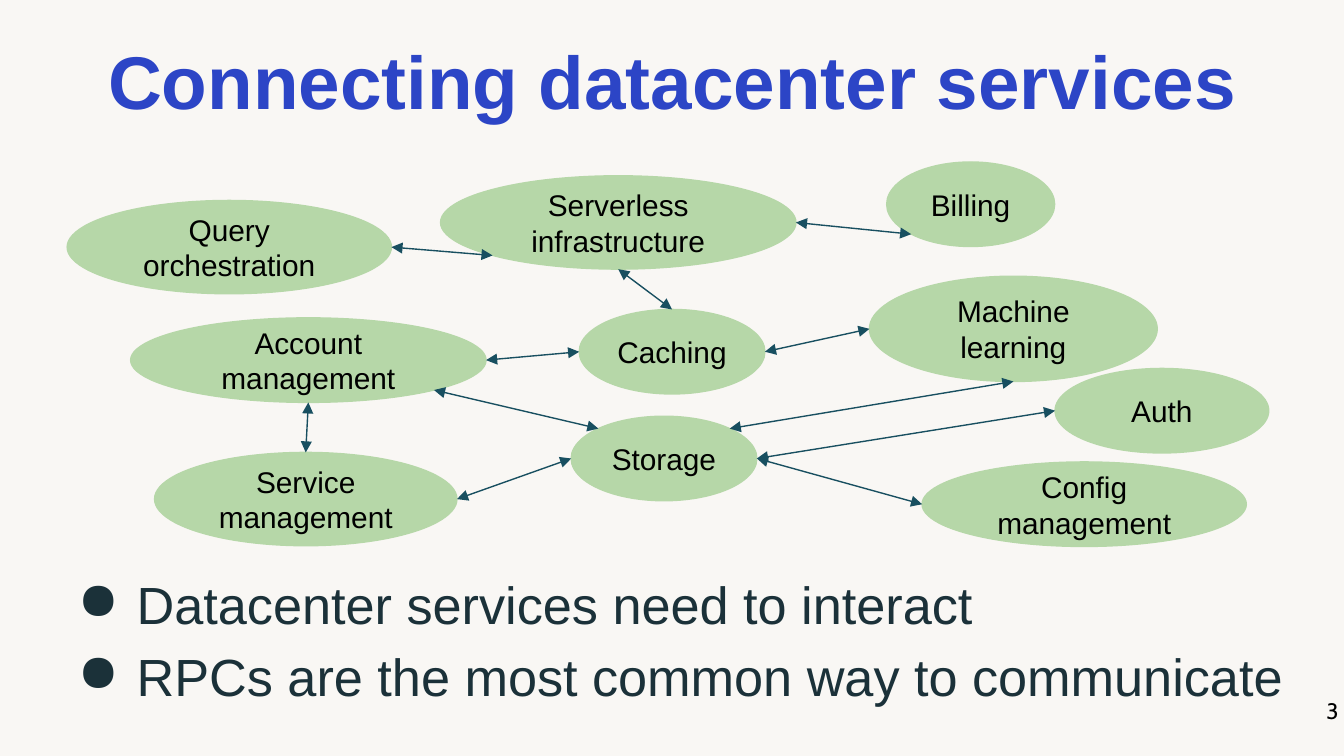
import lxml.etree
import pptx
import pptx.dml.color
import pptx.enum.shapes
import pptx.enum.text
import pptx.oxml.ns
import pptx.util

Pt = pptx.util.Pt
RGB = pptx.dml.color.RGBColor.from_string
qn = pptx.oxml.ns.qn
ALIGN = pptx.enum.text.PP_ALIGN
ANCHOR = pptx.enum.text.MSO_ANCHOR

THEME = {
    "background": "F9F7F4",
    "service": "B6D7A8",
    "link": "184F60",
    "line_width": 0.75,
    "title": {"name": "Arial", "size": 40, "color": "2C45C6", "bold": True},
    "label": {"name": "Arial", "size": 16, "color": "000000"},
    "bullet": {"name": "Arial", "size": 28, "color": "1B3139"},
    "number": {"name": "Cabin", "size": 12, "color": "000000"},
}

SLIDE_SIZE = (720, 405)
TITLE = "Connecting datacenter services"
TITLE_BOX = (24.5, 23, 671, 45.4)
BULLETS = ["Datacenter services need to interact",
           "RPCs are the most common way to communicate"]
BULLETS_BOX = (30.2, 294.5, 676, 87.8)
BULLET_INDENT, BULLET_HANG = 36, 31.7
SLIDE_NUMBER = "3"
NUMBER_BOX = (674, 373.7, 43.2, 31)

# service: left, top, width, height
SERVICES = {
    "Serverless infrastructure": (236, 94.2, 190.4, 50),
    "Storage": (306, 223, 99.5, 45.3),
    "Service management": (82.8, 242.4, 162, 50),
    "Query orchestration": (36, 107.4, 173.7, 50),
    "Config management": (494, 247.5, 173.7, 45.3),
    "Billing": (475, 86.8, 90, 45.3),
    "Account management": (70, 170.3, 190.4, 45.3),
    "Machine learning": (465.8, 148, 154.2, 56.4),
    "Auth": (565.2, 197.4, 114.5, 45.3),
    "Caching": (310.3, 165.8, 99.5, 45.3),
}

# service, side, service, side
LINKS = [
    ("Service management", "right", "Storage", "left"),
    ("Storage", "right", "Config management", "left"),
    ("Machine learning", "bottom", "Storage", "top right"),
    ("Machine learning", "left", "Caching", "right"),
    ("Account management", "bottom", "Service management", "top"),
    ("Account management", "bottom right", "Storage", "top left"),
    ("Account management", "right", "Caching", "left"),
    ("Serverless infrastructure", "bottom", "Caching", "top"),
    ("Serverless infrastructure", "bottom left", "Query orchestration", "right"),
    ("Billing", "bottom left", "Serverless infrastructure", "right"),
    ("Auth", "left", "Storage", "right"),
]

# Connection sites of an ellipse in index order, as offsets from its centre in radii
DIAGONAL = 0.5 ** 0.5
SITES = {
    "top": (0, -1),
    "top left": (-DIAGONAL, -DIAGONAL),
    "left": (-1, 0),
    "bottom left": (-DIAGONAL, DIAGONAL),
    "bottom": (0, 1),
    "bottom right": (DIAGONAL, DIAGONAL),
    "right": (1, 0),
    "top right": (DIAGONAL, -DIAGONAL),
}


def points(values):
    return [Pt(value) for value in values]


def site_point(service, side):
    left, top, width, height = SERVICES[service]
    across, down = SITES[side]
    return left + width / 2 * (1 + across), top + height / 2 * (1 + down)


def style_font(font, style):
    for key, value in style.items():
        if key == "color":
            font.color.rgb = RGB(value)
        else:
            setattr(font, key, Pt(value) if key == "size" else value)


def set_frame(frame, margin, anchor):
    settings = {"word_wrap": True, "vertical_anchor": anchor,
                "auto_size": pptx.enum.text.MSO_AUTO_SIZE.NONE}
    settings.update({f"margin_{side}": Pt(margin)
                     for side in ("left", "top", "right", "bottom")})
    for key, value in settings.items():
        setattr(frame, key, value)


def write(paragraph, text, style, align, spacing=1.0):
    paragraph.text = text
    paragraph.alignment = align
    paragraph.line_spacing = spacing
    paragraph.space_before = Pt(0)
    style_font(paragraph.font, style)
    style_font(paragraph.runs[0].font, style)


def add_bullet(paragraph):
    properties = paragraph._p.get_or_add_pPr()
    properties.set("marL", str(Pt(BULLET_INDENT)))
    properties.set("indent", str(-Pt(BULLET_HANG)))
    color = lxml.etree.SubElement(properties, qn("a:buClr"))
    lxml.etree.SubElement(color, qn("a:srgbClr"), val=THEME["bullet"]["color"])
    lxml.etree.SubElement(properties, qn("a:buChar"), char="●")


def add_service(slide, name):
    ellipse = slide.shapes.add_shape(
        pptx.enum.shapes.MSO_SHAPE.OVAL, *points(SERVICES[name]))
    ellipse.shadow.inherit = False
    ellipse.fill.solid()
    ellipse.fill.fore_color.rgb = RGB(THEME["service"])
    ellipse.line.color.rgb = RGB(THEME["service"])
    ellipse.line.width = Pt(THEME["line_width"])
    set_frame(ellipse.text_frame, 5, ANCHOR.MIDDLE)
    write(ellipse.text_frame.paragraphs[0], name, THEME["label"], ALIGN.CENTER)
    return ellipse


def add_link(slide, ellipses, start, start_side, end, end_side):
    """Draw a two-headed arrow glued to a connection site at each end."""
    link = slide.shapes.add_connector(
        pptx.enum.shapes.MSO_CONNECTOR.STRAIGHT,
        *points(site_point(start, start_side) + site_point(end, end_side)))
    link.line.color.rgb = RGB(THEME["link"])
    link.line.width = Pt(THEME["line_width"])
    line = link.line._ln
    for tag in ("a:headEnd", "a:tailEnd"):
        lxml.etree.SubElement(line, qn(tag), type="triangle")
    lxml.etree.SubElement(line.getparent(), qn("a:effectLst"))
    glue = link._element.find(".//" + qn("p:cNvCxnSpPr"))
    for tag, service, side in (("a:stCxn", start, start_side),
                               ("a:endCxn", end, end_side)):
        lxml.etree.SubElement(glue, qn(tag), id=str(ellipses[service].shape_id),
                              idx=str(list(SITES).index(side)))


def main():
    deck = pptx.Presentation()
    deck.slide_width, deck.slide_height = points(SLIDE_SIZE)
    slide = deck.slides.add_slide(deck.slide_layouts.get_by_name("Title Only"))
    slide.background.fill.solid()
    slide.background.fill.fore_color.rgb = RGB(THEME["background"])

    title = slide.shapes.title
    for key, value in zip(("left", "top", "width", "height"), points(TITLE_BOX)):
        setattr(title, key, value)
    set_frame(title.text_frame, 0, ANCHOR.MIDDLE)
    write(title.text_frame.paragraphs[0], TITLE, THEME["title"], ALIGN.CENTER, 0.9)

    ellipses = {name: add_service(slide, name) for name in SERVICES}

    bullets = slide.shapes.add_textbox(*points(BULLETS_BOX)).text_frame
    set_frame(bullets, 7.2, ANCHOR.TOP)
    for index, text in enumerate(BULLETS):
        paragraph = bullets.add_paragraph() if index else bullets.paragraphs[0]
        add_bullet(paragraph)
        write(paragraph, text, THEME["bullet"], ALIGN.LEFT, 1.15)

    for link in LINKS:
        add_link(slide, ellipses, *link)

    number = slide.shapes.add_textbox(*points(NUMBER_BOX)).text_frame
    set_frame(number, 0, ANCHOR.TOP)
    write(number.paragraphs[0], SLIDE_NUMBER, THEME["number"], ALIGN.RIGHT)

    deck.save("out.pptx")


if __name__ == "__main__":
    main()
